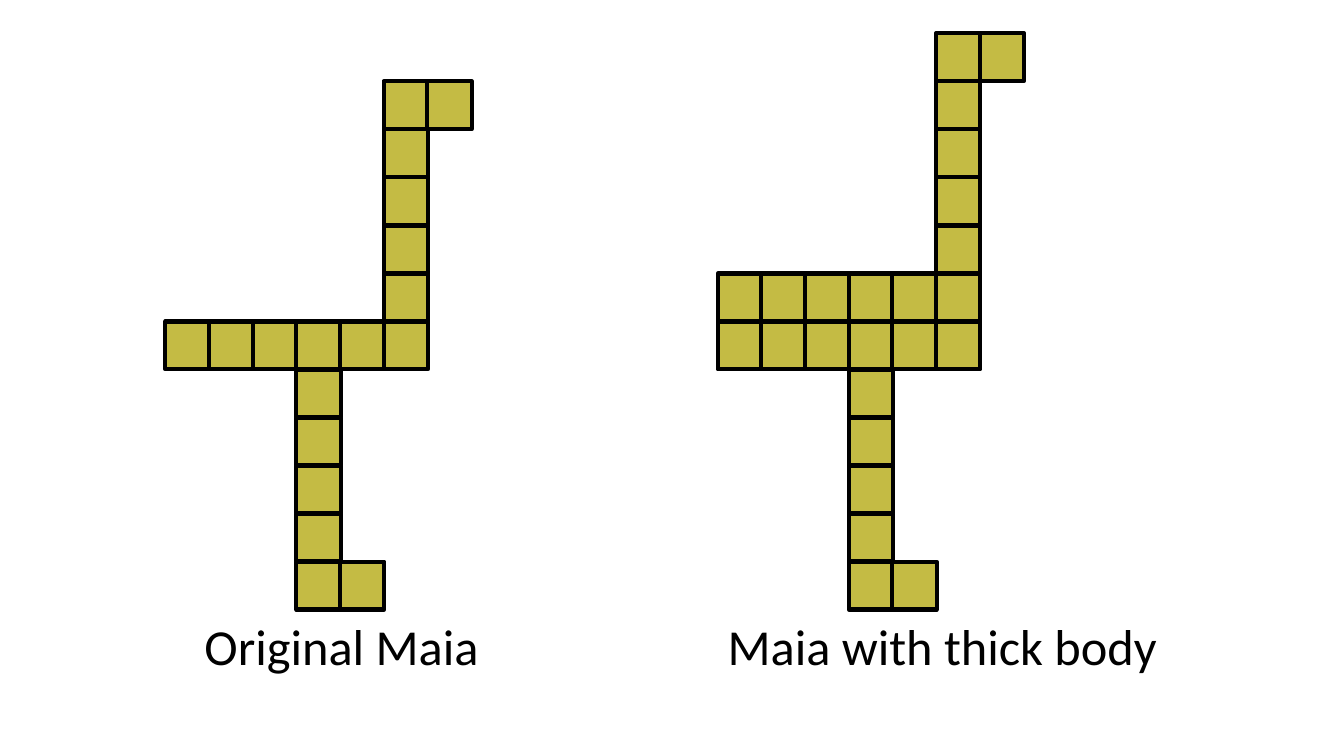
from pptx import Presentation
from pptx.dml.color import RGBColor
from pptx.enum.shapes import MSO_SHAPE
from pptx.enum.text import MSO_AUTO_SIZE
from pptx.util import Emu, Pt

RECTANGLE = MSO_SHAPE.RECTANGLE
FIT_SHAPE = MSO_AUTO_SIZE.SHAPE_TO_FIT_TEXT

PX = 3048  # EMU per px, 300 px to the inch
BLANK_LAYOUT = 6
COLORS = {"cell": "C4BB44", "ink": "000000"}
CELL_WIDTH, CELL_HEIGHT = 132, 142
COLUMN_STEP, ROW_STEP = 130, 143
FIGURE_TOP = 99
CAPTION_TOP, CAPTION_HEIGHT = 1815, 213

NECK = ["     #"] * 4
BODY = ["######"]
LEG = ["   #"] * 4 + ["   ##"]
HEAD = ["     ##"]
ORIGINAL_MAIA = [""] + HEAD + NECK + BODY + LEG
THICK_MAIA = HEAD + NECK + BODY * 2 + LEG


def px(*lengths):
    return [Emu(length * PX) for length in lengths]


def color(name):
    return RGBColor.from_string(COLORS[name])


def add_text(container, text, box, size=36, font="Calibri", ink="ink"):
    text_box = container.shapes.add_textbox(*px(*box))
    frame = text_box.text_frame
    frame.word_wrap = True
    frame.auto_size = FIT_SHAPE
    run = frame.paragraphs[0].add_run()
    run.text = text
    run.font.size = Pt(size)
    run.font.name = font
    run.font.color.rgb = color(ink)


def add_cell(container, left, top):
    cell = container.shapes.add_shape(
        RECTANGLE, *px(left, top, CELL_WIDTH, CELL_HEIGHT))
    cell.shadow.inherit = False
    cell.fill.solid()
    cell.fill.fore_color.rgb = color("cell")
    cell.line.color.rgb = color("ink")
    cell.line.width = Pt(3)


def add_figure(slide, pattern, left, top, caption, caption_offset, caption_width):
    """Group one cell per # in the pattern with the caption below."""
    group = slide.shapes.add_group_shape()
    for row, line in enumerate(pattern):
        for column, mark in enumerate(line):
            if mark == "#":
                add_cell(group, left + column * COLUMN_STEP, top + row * ROW_STEP)
    add_text(group, caption,
             (left + caption_offset, CAPTION_TOP, caption_width, CAPTION_HEIGHT))


def main():
    presentation = Presentation()
    presentation.slide_width, presentation.slide_height = px(4000, 2250)
    slide = presentation.slides.add_slide(presentation.slide_layouts[BLANK_LAYOUT])
    add_figure(slide, ORIGINAL_MAIA, 492, FIGURE_TOP, "Original Maia", 87, 1014)
    add_figure(slide, THICK_MAIA, 2136, FIGURE_TOP, "Maia with thick body", 0, 1341)
    presentation.save("out.pptx")


if __name__ == "__main__":
    main()
